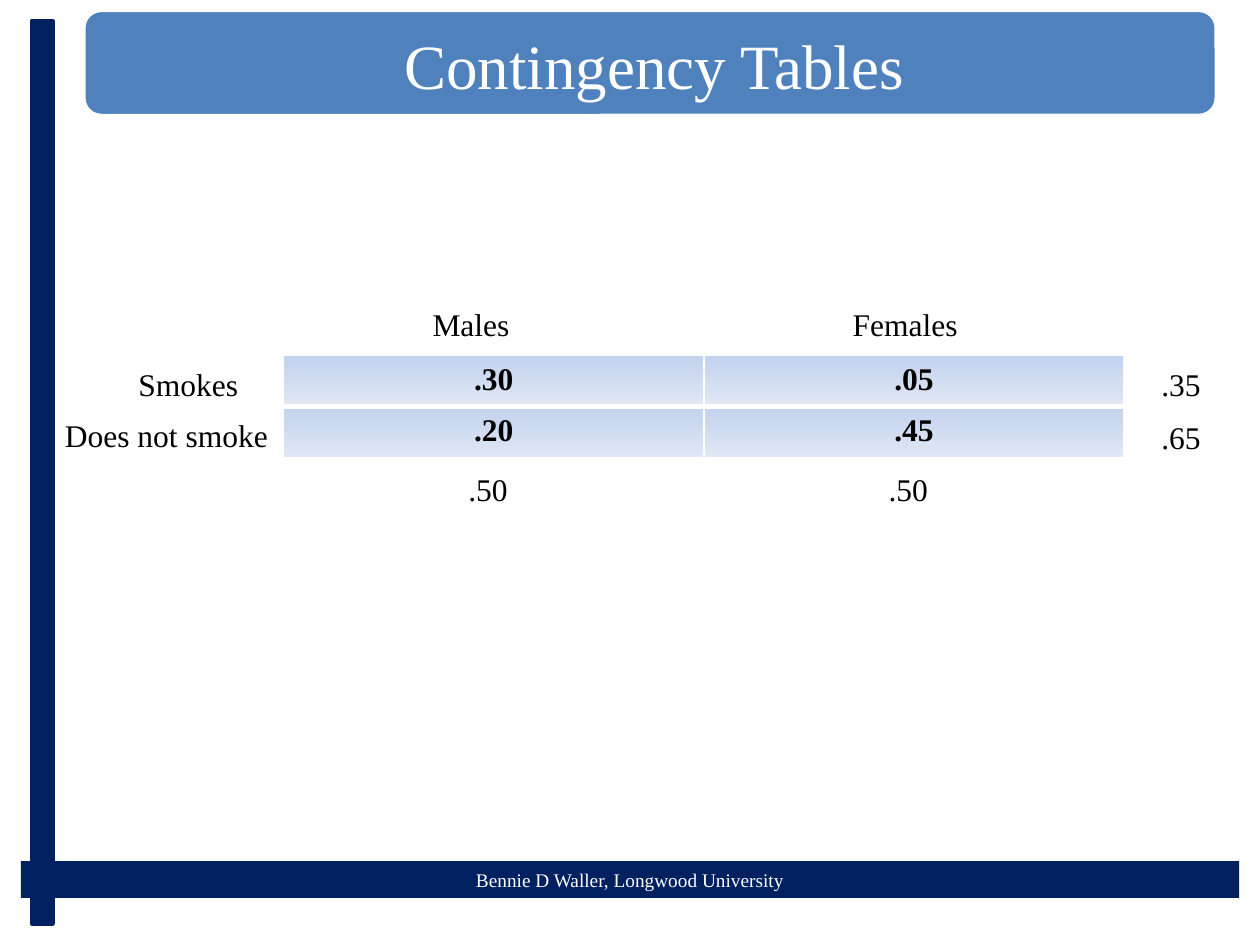
from dataclasses import dataclass

from lxml import etree
from pptx import Presentation
from pptx.dml.color import RGBColor
from pptx.enum.shapes import MSO_SHAPE
from pptx.enum.text import MSO_ANCHOR, PP_ALIGN
from pptx.oxml.ns import qn
from pptx.util import Cm, Pt

RECT, ROUND = MSO_SHAPE.RECTANGLE, MSO_SHAPE.ROUNDED_RECTANGLE
LEFT, CENTER = PP_ALIGN.LEFT, PP_ALIGN.CENTER
MIDDLE = MSO_ANCHOR.MIDDLE

NAVY = RGBColor(0x00, 0x20, 0x60)
BLUE = RGBColor(0x4F, 0x81, 0xBD)
WHITE = RGBColor(0xFF, 0xFF, 0xFF)
BLACK = RGBColor(0x00, 0x00, 0x00)
TOP = RGBColor(0xC2, 0xD1, 0xED)
BASE = RGBColor(0xE1, 0xE8, 0xF5)
FONT = "Times New Roman"

VALUES = [[".30", ".05"], [".20", ".45"]]
GRID_X, GRID_Y = 5.72, 7.17
COL, ROW = 8.47, 1.03


@dataclass
class Box:
    x: float
    y: float
    w: float
    h: float = 1.02

    def area(self) -> tuple:
        return Cm(self.x), Cm(self.y), Cm(self.w), Cm(self.h)


@dataclass
class Label:
    text: str
    box: Box
    align: PP_ALIGN = CENTER


def write(frame, text: str, size=18, color=BLACK, bold=False, align=CENTER):
    para = frame.paragraphs[0]
    para.alignment = align
    run = para.add_run()
    run.text = text
    font = run.font
    font.name, font.size, font.bold = FONT, Pt(size), bold
    font.color.rgb = color
    return run


def add_box(slide, kind, box: Box, fill: RGBColor, line=None, width=0.0):
    shape = slide.shapes.add_shape(kind, *box.area())
    shape.shadow.inherit = False
    shape.fill.solid()
    shape.fill.fore_color.rgb = fill
    if line is None:
        shape.line.fill.background()
    else:
        shape.line.color.rgb = line
        shape.line.width = Pt(width)
    return shape


def add_text(slide, box: Box, text: str, **style):
    frame = slide.shapes.add_textbox(*box.area()).text_frame
    frame.word_wrap = True
    return write(frame, text, **style)


def add_glow(run) -> None:
    """Put a soft dark shadow behind the letters."""
    effects = etree.Element(qn("a:effectLst"))
    shade = etree.SubElement(effects, qn("a:outerShdw"), blurRad="50800",
                             dist="38100", dir="5400000", algn="t")
    color = etree.SubElement(shade, qn("a:srgbClr"), val=str(BLACK))
    etree.SubElement(color, qn("a:alpha"), val="60000")
    run.font.fill._xPr.find(qn("a:solidFill")).addnext(effects)


def add_edges(cell, widths: dict) -> None:
    props = cell._tc.get_or_add_tcPr()
    for spot, (side, width) in enumerate(widths.items()):
        line = etree.Element(qn(f"a:ln{side}"), w=str(Pt(width)))
        fill = etree.SubElement(line, qn("a:solidFill"))
        etree.SubElement(fill, qn("a:srgbClr"), val=str(WHITE))
        props.insert(spot, line)


def add_grid(slide) -> None:
    rows, cols = len(VALUES), len(VALUES[0])
    box = Box(GRID_X, GRID_Y, cols * COL, rows * ROW)
    table = slide.shapes.add_table(rows, cols, *box.area()).table
    table.first_row = table.horz_banding = False
    for r, line in enumerate(VALUES):
        for c, value in enumerate(line):
            cell = table.cell(r, c)
            write(cell.text_frame, value, bold=True)
            cell.fill.gradient()
            cell.fill.gradient_angle = 270
            for stop, color in zip(cell.fill.gradient_stops, (TOP, BASE)):
                stop.color.rgb = color
            add_edges(cell, {"L": 1, "R": 1, "T": 3 if r else 1,
                             "B": 1 if r else 3})


def main() -> None:
    deck = Presentation()
    deck.slide_width, deck.slide_height = Cm(25.4), Cm(19.05)
    slide = deck.slides.add_slide(deck.slide_layouts[6])

    # Footer and side bar
    foot = add_box(slide, RECT, Box(0.42, 17.36, 24.56, 0.74), NAVY)
    foot.text_frame.vertical_anchor = MIDDLE
    write(foot.text_frame, "Bennie D Waller, Longwood University",
          size=11, color=WHITE)
    add_box(slide, RECT, Box(0.64, 0.42, 0.42, 18.2), NAVY, NAVY, 2.5)

    # Title banner
    add_box(slide, ROUND, Box(1.69, 0.21, 22.83, 2.12), BLUE, WHITE, 2)
    title = add_text(slide, Box(2.33, 0.42, 21.72, 1.8),
                     "Contingency Tables", size=36, color=WHITE)
    add_glow(title)

    # Table with its headings and totals
    add_grid(slide)
    labels = [
        Label("Smokes", Box(2.54, 7.24, 2.75), LEFT),
        Label("Does not smoke", Box(1.06, 8.26, 4.87), LEFT),
        Label(".35", Box(22.86, 7.24, 1.9)),
        Label(".65", Box(22.86, 8.31, 1.9)),
    ]
    for c, (head, total) in enumerate([("Males", ".50"), ("Females", ".50")]):
        labels.append(Label(head, Box(8.47 + c * COL, 6.03, 2.75), LEFT))
        labels.append(Label(total, Box(8.89 + c * COL, 9.35, 1.9)))
    for item in labels:
        add_text(slide, item.box, item.text, align=item.align)

    deck.save("out.pptx")


if __name__ == "__main__":
    main()
